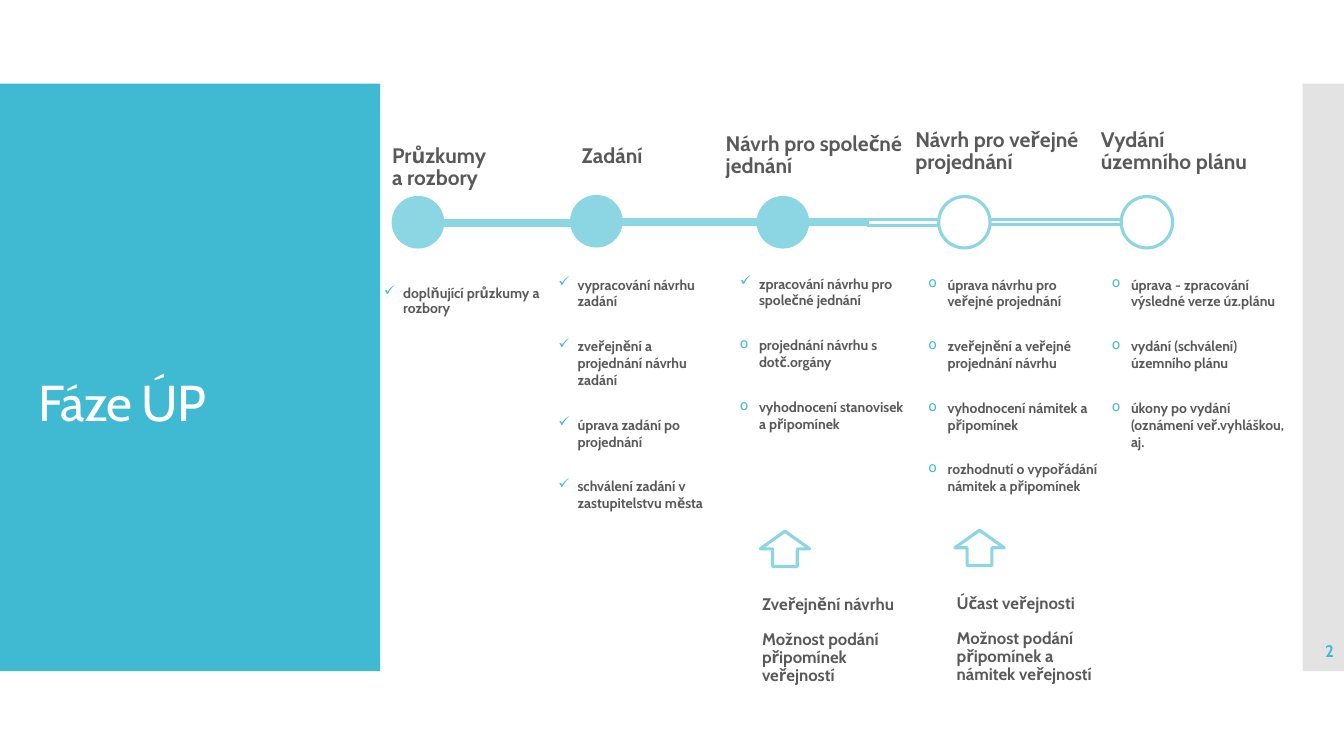
from lxml.etree import SubElement
from pptx import Presentation
from pptx.dml.color import RGBColor
from pptx.enum.shapes import MSO_SHAPE
from pptx.enum.text import MSO_ANCHOR, PP_ALIGN
from pptx.oxml.ns import qn
from pptx.util import Inches, Pt

TEAL = RGBColor(0x40, 0xBA, 0xD2)
LIGHT_TEAL = RGBColor(0x8C, 0xD6, 0xE4)
GREY = RGBColor(0xC8, 0xC8, 0xC8)
DARK = RGBColor(0x59, 0x59, 0x59)
WHITE = RGBColor(0xFF, 0xFF, 0xFF)
BODY = {"size": Pt(10), "bold": True}
NOTE = {"size": Pt(12), "bold": True}
HEADING = {"size": Pt(15), "bold": True}
DONE, OPEN = "✓", "o"

deck = Presentation()
deck.slide_width, deck.slide_height = Inches(13.33), Inches(7.5)
page = deck.slides.add_slide(deck.slide_layouts[6])


def add_block(kind, left, top, width, height, fill, line=None, weight=0.85):
    block = page.shapes.add_shape(
        kind, Inches(left), Inches(top), Inches(width), Inches(height))
    block.shadow.inherit = False
    block.fill.solid()
    block.fill.fore_color.rgb = fill
    if line is None:
        block.line.fill.background()
    else:
        block.line.color.rgb = line
        block.line.width = Pt(weight)
    return block


def add_text(left, top, width, height, items, font, color=DARK, spacing=0.9):
    """Add a text box; each item is a (bullet or None, text) pair."""
    box = page.shapes.add_textbox(
        Inches(left), Inches(top), Inches(width), Inches(height))
    frame = box.text_frame
    frame.word_wrap = True
    for index, (bullet, text) in enumerate(items):
        para = frame.paragraphs[0] if index == 0 else frame.add_paragraph()
        para.line_spacing = spacing
        if index:
            para.space_before = Pt(12)
        if bullet:
            para.space_after = Pt(8)
            props = para._p.get_or_add_pPr()
            props.set("marL", str(Inches(0.19)))
            props.set("indent", str(Inches(-0.19)))
            bullet_color = SubElement(props, qn("a:buClr"))
            SubElement(bullet_color, qn("a:srgbClr"), val=str(TEAL))
            SubElement(props, qn("a:buChar"), char=bullet)
        span = para.add_run()
        span.text = text
        span.font.name = "Cabin"
        span.font.color.rgb = color
        for name, value in font.items():
            setattr(span.font, name, value)
    return box


# Side panels, title and page number
add_block(MSO_SHAPE.RECTANGLE, 0, 0.83, 3.77, 5.83, TEAL)
side_strip = add_block(MSO_SHAPE.RECTANGLE, 12.92, 0.83, 0.41, 5.83, GREY)
strip_color = side_strip.fill._xPr.find(qn("a:solidFill"))[0]
SubElement(strip_color, qn("a:alpha"), val="50000")

title = add_text(0.28, 1.23, 3.4, 5.03, [(None, "Fáze ÚP")], {"size": Pt(36)}, WHITE)
title.text_frame.vertical_anchor = MSO_ANCHOR.MIDDLE
title.text_frame.margin_top = Inches(0.6)
title.text_frame.paragraphs[0].runs[0].font._element.set("spc", "-60")

number = add_text(11.66, 6.26, 1.67, 0.4, [(None, "2")], NOTE, TEAL, 1.0)
number.text_frame.vertical_anchor = MSO_ANCHOR.MIDDLE
number.text_frame.paragraphs[0].alignment = PP_ALIGN.RIGHT

# Timeline: bars first, circles on top
bars = [
    (4.29, 2.18, 1.43, 0.07, True),
    (6.11, 2.17, 1.43, 0.07, True),
    (7.91, 2.17, 0.7, 0.07, True),
    (8.6, 2.18, 0.71, 0.06, False),
    (9.71, 2.18, 1.43, 0.05, False),
]
circles = [
    (3.89, 1.95, 0.51, 0.51, True),
    (5.66, 1.94, 0.51, 0.51, True),
    (7.51, 1.95, 0.51, 0.51, True),
    (9.31, 1.95, 0.51, 0.51, False),
    (11.12, 1.95, 0.51, 0.51, False),
]
for kind, parts in ((MSO_SHAPE.RECTANGLE, bars), (MSO_SHAPE.OVAL, circles)):
    for *place, finished in parts:
        fill, weight = (LIGHT_TEAL, 0.85) if finished else (WHITE, 2.25)
        add_block(kind, *place, fill, LIGHT_TEAL, weight)

# Phase headings
headings = [
    (3.79, 1.39, 1.16, 0.56, "Průzkumy a rozbory"),
    (5.67, 1.39, 1.16, 0.33, "Zadání"),
    (7.1, 1.27, 2.07, 0.56, "Návrh pro společné jednání"),
    (8.98, 1.23, 2.07, 0.56, "Návrh pro veřejné projednání"),
    (10.82, 1.23, 1.72, 0.56, "Vydání územního plánu"),
]
for *place, heading in headings:
    add_text(*place, [(None, heading)], HEADING)

# Steps of each phase
steps = [
    (3.71, 2.79, 2.02, 0.4, 0.9, [(DONE, "doplňující průzkumy a rozbory")]),
    (5.44, 2.69, 1.79, 2.29, 1.0, [
        (DONE, "vypracování návrhu zadání"),
        (DONE, "zveřejnění a projednání návrhu zadání"),
        (DONE, "úprava zadání po projednání"),
        (DONE, "schválení zadání v zastupitelstvu města")]),
    (7.24, 2.68, 1.84, 1.67, 1.0, [
        (DONE, "zpracování návrhu pro společné jednání"),
        (OPEN, "projednání návrhu s dotč.orgány"),
        (OPEN, "vyhodnocení stanovisek a připomínek")]),
    (9.11, 2.69, 1.89, 2.74, 1.0, [
        (OPEN, "úprava návrhu pro veřejné projednání"),
        (OPEN, "zveřejnění a veřejné projednání návrhu"),
        (OPEN, "vyhodnocení námitek a připomínek"),
        (OPEN, "rozhodnutí o vypořádání námitek a připomínek")]),
    (10.93, 2.69, 2, 2.29, 1.0, [
        (OPEN, "úprava - zpracování výsledné verze úz.plánu"),
        (OPEN, "vydání (schválení) územního plánu"),
        (OPEN, "úkony po vydání (oznámení veř.vyhláškou, aj.")]),
]
for *place, spacing, items in steps:
    add_text(*place, items, BODY, spacing=spacing)

# Public involvement
involvement = [
    (7.46, 5.27, "Zveřejnění návrhu", "Možnost podání připomínek veřejností"),
    (9.39, 5.26, "Účast veřejnosti", "Možnost podání připomínek a námitek veřejností"),
]
for left, top, *notes in involvement:
    add_block(MSO_SHAPE.UP_ARROW, left + 0.08, top, 0.49, 0.35, WHITE, LIGHT_TEAL, 2.25)
    add_text(left, top + 0.59, 1.73, 1, [(None, note) for note in notes], NOTE)

deck.save("out.pptx")
